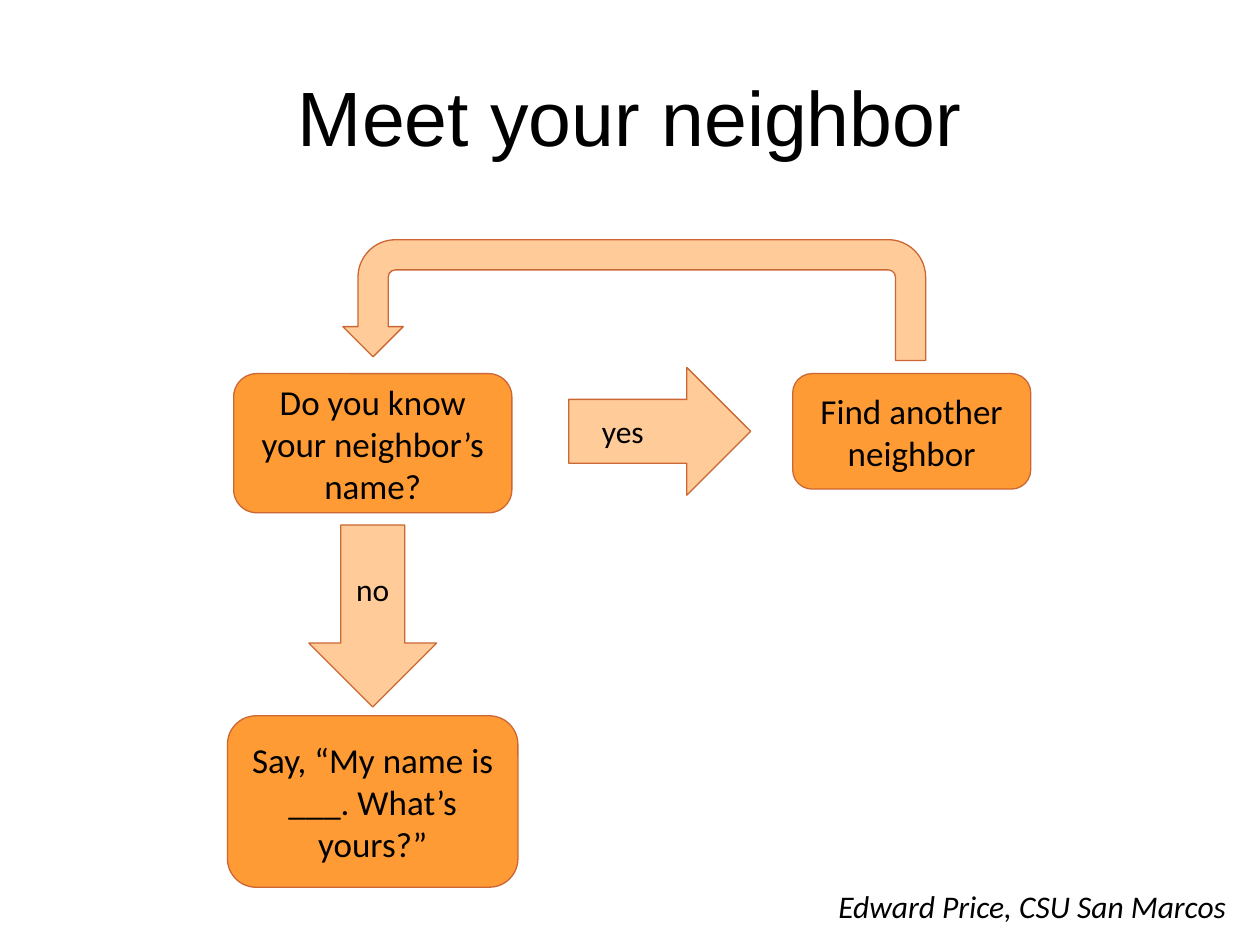
from pptx import Presentation
from pptx.dml.color import RGBColor
from pptx.enum.shapes import MSO_SHAPE as Kind
from pptx.enum.text import MSO_ANCHOR as Anchor, PP_ALIGN as Align
from pptx.util import Pt

ORANGE, PEACH, RUST, BLACK = "FF9B35", "FFCC99", "CC6633", "000000"


def color(code):
    return RGBColor.from_string(code)


def write(shape, text, size=18, font="Calibri", align=Align.CENTER,
          anchor=Anchor.MIDDLE, italic=False, pad=(7.2, 3.6, 7.2, 3.6)):
    frame = shape.text_frame
    frame.word_wrap = True
    frame.vertical_anchor = anchor
    (frame.margin_left, frame.margin_top,
     frame.margin_right, frame.margin_bottom) = map(Pt, pad)
    para = frame.paragraphs[0]
    para.alignment = align
    run = para.add_run()
    run.text = text
    run.font.name = font
    run.font.size = Pt(size)
    run.font.italic = italic
    run.font.color.rgb = color(BLACK)


def label(slide, box, text, **style):
    write(slide.shapes.add_textbox(*map(Pt, box)), text, **style)


def block(slide, kind, box, fill):
    shape = slide.shapes.add_shape(kind, *map(Pt, box))
    shape.shadow.inherit = False
    shape.fill.solid()
    shape.fill.fore_color.rgb = color(fill)
    shape.line.color.rgb = color(RUST)
    shape.line.width = Pt(0.75)
    return shape


def step(slide, box, text):
    write(block(slide, Kind.FLOWCHART_ALTERNATE_PROCESS, box, ORANGE),
          text, size=20)


def arrow(slide, kind, box, text, **style):
    write(block(slide, kind, box, PEACH), text, **style)


def loop(slide, box):
    shape = block(slide, Kind.U_TURN_ARROW, box, PEACH)
    for i, value in enumerate((0.25, 0.25, 0.25, 0.31, 0.97)):
        shape.adjustments[i] = value
    shape.element.spPr.xfrm.set("flipH", "1")


def main():
    deck = Presentation()
    deck.slide_width, deck.slide_height = Pt(720), Pt(540)
    slide = deck.slides.add_slide(deck.slide_layouts[6])

    # Title
    label(slide, (54, 28, 612, 76), "Meet your neighbor", size=44, font="Arial")

    # Question and its two answers
    step(slide, (133.5, 213.5, 159, 79.5), "Do you know your neighbor’s name?")
    arrow(slide, Kind.RIGHT_ARROW, (325, 210, 104, 73), "yes",
          align=Align.LEFT, pad=(19, 3.6, 0, 3.6))
    arrow(slide, Kind.DOWN_ARROW, (176.5, 300, 73, 104), "no",
          anchor=Anchor.TOP, pad=(0, 26, 0, 0))

    # Outcomes, with the way back to the question
    step(slide, (453, 213.5, 136, 66), "Find another neighbor")
    loop(slide, (196, 137, 333, 69))
    step(slide, (130, 409, 166, 98), "Say, “My name is ___. What’s yours?”")

    # Credit
    label(slide, (472, 503.5, 243, 29), "Edward Price, CSU San Marcos",
          align=Align.LEFT, anchor=Anchor.TOP, italic=True)

    deck.save("out.pptx")


if __name__ == "__main__":
    main()
